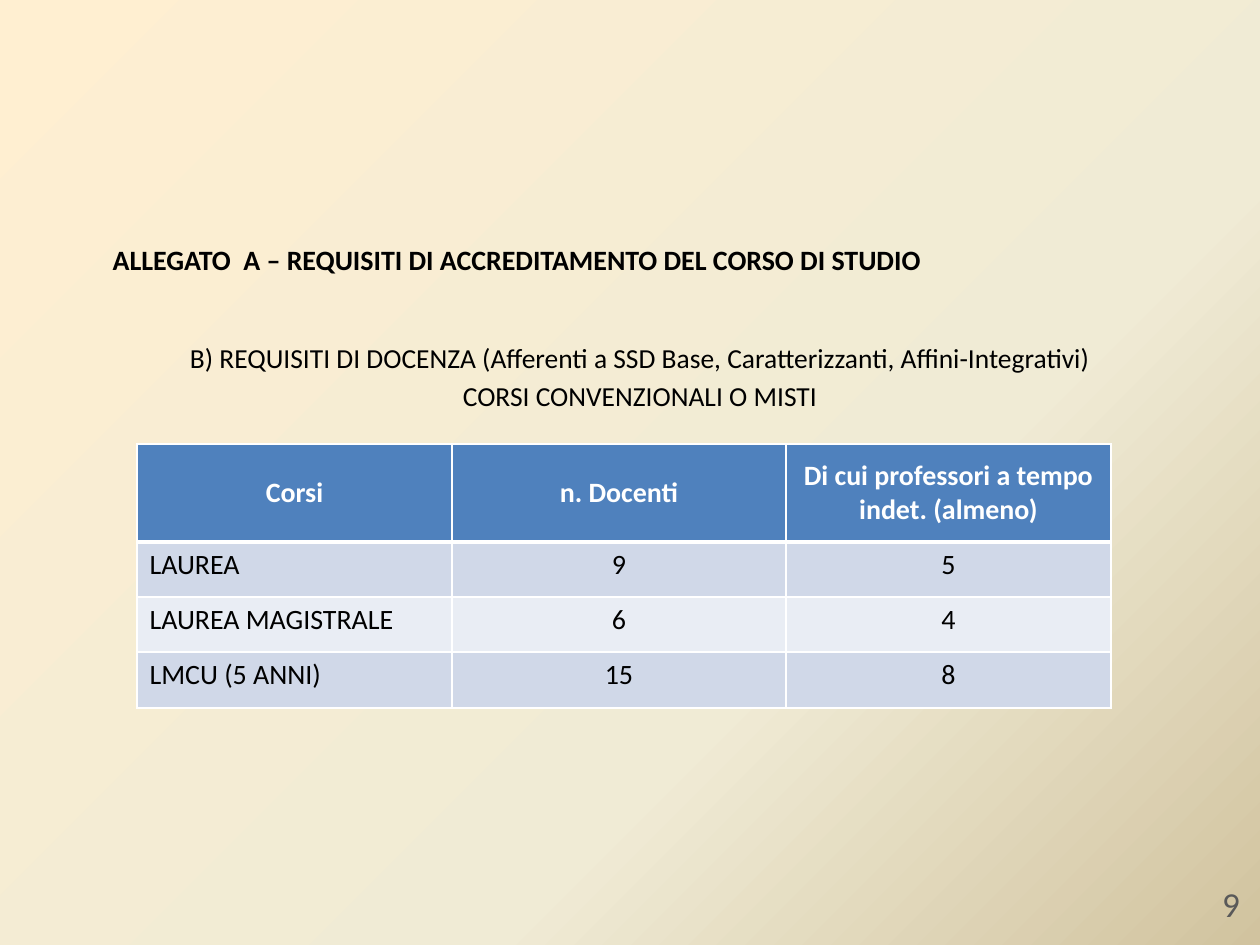
"""Build the slide on teaching staff requirements for degree courses."""
from copy import deepcopy

from lxml.etree import SubElement
from pptx import Presentation
from pptx.dml.color import RGBColor
from pptx.enum.text import MSO_ANCHOR, PP_ALIGN
from pptx.oxml.ns import qn
from pptx.util import Pt

PX = 914400 / 126
BLACK = RGBColor(0x00, 0x00, 0x00)
WHITE = RGBColor(0xFF, 0xFF, 0xFF)
GRAY = RGBColor(0x59, 0x59, 0x59)
BLUE = RGBColor(0x4F, 0x81, 0xBD)
BAND_DARK = RGBColor(0xD0, 0xD8, 0xE8)
BAND_LIGHT = RGBColor(0xE9, 0xED, 0xF4)
CREAM = RGBColor(0xFF, 0xEF, 0xD1)
IVORY = RGBColor(0xF0, 0xEB, 0xD5)
SAND = RGBColor(0xD1, 0xC3, 0x9F)


def px(*lengths):
    return [round(n * PX) for n in lengths]


def add_text(p, text, size, color, bold=False, align=PP_ALIGN.CENTER):
    p.alignment = align
    r = p.add_run()
    r.text = text
    r.font.name = "Calibri"
    r.font.size = Pt(size)
    r.font.bold = bold
    r.font.color.rgb = color


prs = Presentation()
prs.slide_width, prs.slide_height = px(1260, 945)
s = prs.slides.add_slide(prs.slide_layouts[5])

fill = s.background.fill
fill.gradient()
fill.gradient_angle = 315
last_stop = list(s.element.iter(qn("a:gs")))[-1]
last_stop.addnext(deepcopy(last_stop))
for stop, (position, color) in zip(fill.gradient_stops, [(0, CREAM), (0.65, IVORY), (1, SAND)]):
    stop.position = position
    stop.color.rgb = color

title = s.shapes.title
title.left, title.top, title.width, title.height = px(100, 236, 1101, 49)
tf = title.text_frame
tf.vertical_anchor = MSO_ANCHOR.TOP
add_text(tf.paragraphs[0], "ALLEGATO  A – REQUISITI DI ACCREDITAMENTO DEL CORSO DI STUDIO",
         16, BLACK, True, PP_ALIGN.LEFT)

tf = s.shapes.add_textbox(*px(134, 335, 1012, 79)).text_frame
tf.word_wrap = True
add_text(tf.paragraphs[0],
         "B) REQUISITI DI DOCENZA (Afferenti a SSD Base, Caratterizzanti, Affini-Integrativi)",
         15.7, BLACK)
p = tf.add_paragraph()
p.space_before = Pt(3)
add_text(p, "CORSI CONVENZIONALI O MISTI", 15.7, BLACK)

rows = [
    ("Corsi", "n. Docenti", "Di cui professori a tempo indet. (almeno)"),
    ("LAUREA", "9", "5"),
    ("LAUREA MAGISTRALE", "6", "4"),
    ("LMCU (5 ANNI)", "15", "8"),
]
table = s.shapes.add_table(len(rows), 3, *px(137, 444, 974, 264)).table
for column, width in zip(table.columns, px(315, 334, 325)):
    column.width = width
for row, height in zip(table.rows, px(98, 55, 55, 56)):
    row.height = height
for i, texts in enumerate(rows):
    header = i == 0
    for j, text in enumerate(texts):
        cell = table.cell(i, j)
        cell.vertical_anchor = MSO_ANCHOR.MIDDLE if header else MSO_ANCHOR.TOP
        tcPr = cell._tc.get_or_add_tcPr()
        for side in ("lnL", "lnR", "lnT", "lnB"):
            thick = (header and side == "lnB") or (i == 1 and side == "lnT")
            ln = SubElement(tcPr, qn(f"a:{side}"), w=str(Pt(3 if thick else 1)))
            SubElement(SubElement(ln, qn("a:solidFill")), qn("a:srgbClr"), val=str(WHITE))
        cell.fill.solid()
        cell.fill.fore_color.rgb = BLUE if header else BAND_DARK if i % 2 else BAND_LIGHT
        align = PP_ALIGN.CENTER if header or j else PP_ALIGN.LEFT
        add_text(cell.text_frame.paragraphs[0], text, 16, WHITE if header else BLACK, header, align)

tf = s.shapes.add_textbox(*px(1205, 876, 52, 50)).text_frame
tf.word_wrap = True
add_text(tf.paragraphs[0], "9", 20, GRAY)

prs.save("out.pptx")
